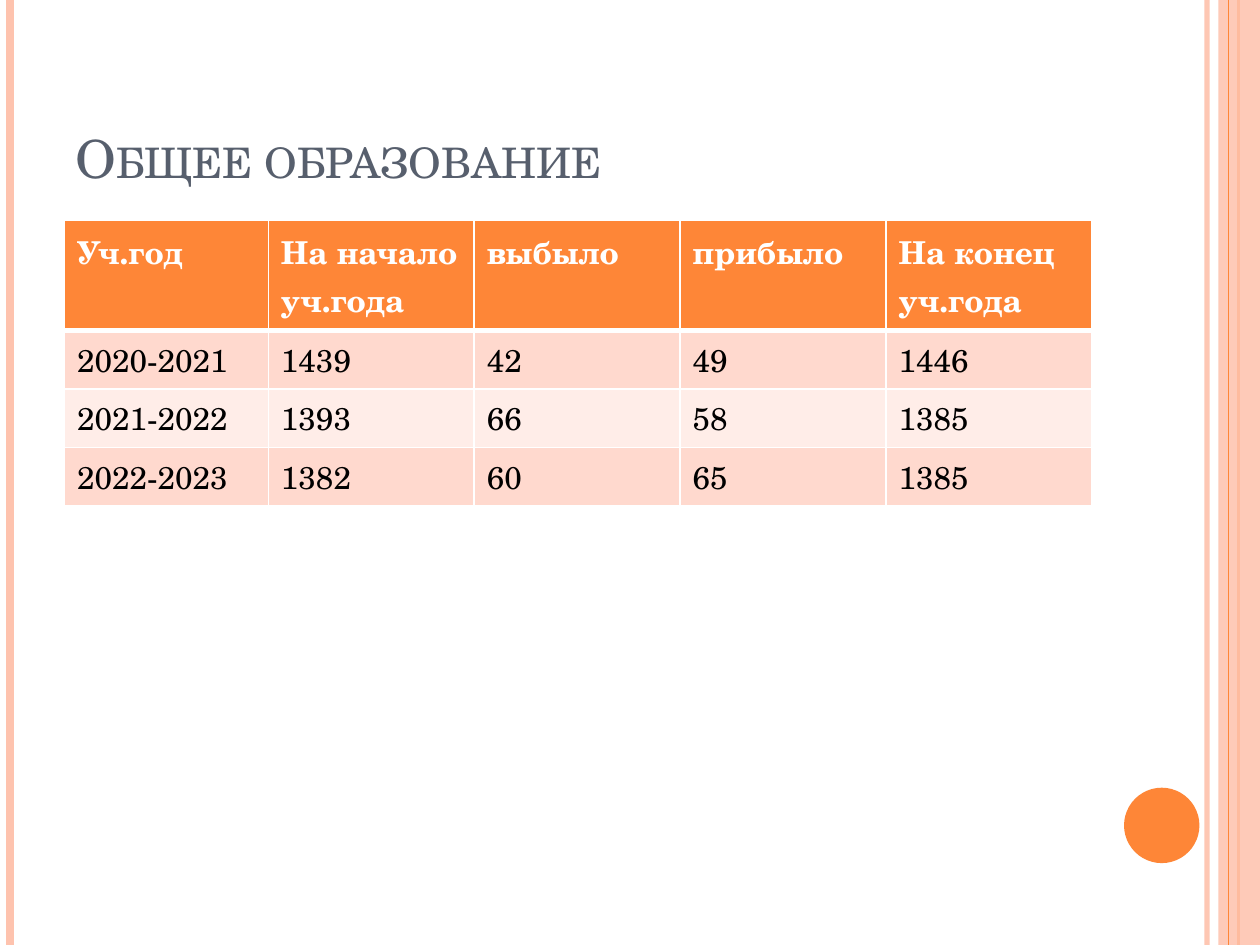
from lxml import etree
from pptx import Presentation
from pptx.dml.color import RGBColor
from pptx.enum.shapes import MSO_CONNECTOR, MSO_SHAPE
from pptx.enum.text import MSO_ANCHOR
from pptx.oxml.ns import qn
from pptx.util import Cm, Pt

STRAIGHT = MSO_CONNECTOR.STRAIGHT
RECTANGLE, OVAL = MSO_SHAPE.RECTANGLE, MSO_SHAPE.OVAL
BOTTOM = MSO_ANCHOR.BOTTOM

FONT = "TeX Gyre Schola"
COLORS = {
    "accent": "FE8637",
    "stripe": "FEC3AE",
    "title": "575F6D",
    "white": "FFFFFF",
    "black": "000000",
    "odd_row": "FFD9CE",
    "even_row": "FFEDE8",
}
SLIDE_WIDTH, SLIDE_HEIGHT = 25.4, 19.05

HEADINGS = ["Уч.год", "На начало уч.года", "выбыло", "прибыло", "На конец уч.года"]
YEARS = [
    ["2020-2021", "1439", "42", "49", "1446"],
    ["2021-2022", "1393", "66", "58", "1385"],
    ["2022-2023", "1382", "60", "65", "1385"],
]
COLUMN_WIDTHS = [4.11] + [4.15] * 4
ROW_HEIGHTS = [2.21] + [1.18] * len(YEARS)


def rgb(color):
    return RGBColor.from_string(COLORS[color])


def set_opacity(fill_parent, percent):
    color = fill_parent.find(qn("a:solidFill"))[0]
    etree.SubElement(color, qn("a:alpha"), val=str(percent * 1000))


def add_border(cell, side, width):
    """Draw one side of a cell in white; call before the cell is filled."""
    line = etree.SubElement(cell._tc.get_or_add_tcPr(), qn(f"a:ln{side}"),
                            w=str(Pt(width)))
    solid = etree.SubElement(line, qn("a:solidFill"))
    etree.SubElement(solid, qn("a:srgbClr"), val=COLORS["white"])


class SlideBuilder:
    def __init__(self, slide, font):
        self.slide = slide
        self.font = font

    def add_run(self, paragraph, text, size, color, bold=False):
        run = paragraph.add_run()
        run.text = text
        run.font.name = self.font
        run.font.size = Pt(size)
        run.font.bold = bold
        run.font.color.rgb = rgb(color)
        return run

    def vertical_line(self, x, color, width, opacity=100):
        stripe = self.slide.shapes.add_connector(
            STRAIGHT, Cm(x), Cm(0), Cm(x), Cm(SLIDE_HEIGHT))
        stripe.line.color.rgb = rgb(color)
        stripe.line.width = Pt(width)
        properties = stripe._element.spPr
        if opacity < 100:
            set_opacity(properties.find(qn("a:ln")), opacity)
        etree.SubElement(properties, qn("a:effectLst"))

    def shape(self, kind, left, top, width, height, color, opacity=100):
        figure = self.slide.shapes.add_shape(
            kind, Cm(left), Cm(top), Cm(width), Cm(height))
        figure.shadow.inherit = False
        figure.fill.solid()
        figure.fill.fore_color.rgb = rgb(color)
        figure.line.fill.background()
        if opacity < 100:
            set_opacity(figure._element.spPr, opacity)

    def title(self, text, left, top, width, height):
        box = self.slide.shapes.add_textbox(Cm(left), Cm(top), Cm(width), Cm(height))
        frame = box.text_frame
        frame.word_wrap = True
        frame.vertical_anchor = BOTTOM
        run = self.add_run(frame.paragraphs[0], text, 30, "title")
        run.font._element.set("cap", "small")

    def table(self, rows, left, top, column_widths, row_heights):
        table = self.slide.shapes.add_table(
            len(rows), len(column_widths), Cm(left), Cm(top),
            Cm(sum(column_widths)), Cm(sum(row_heights))).table
        for column, width in zip(table.columns, column_widths):
            column.width = Cm(width)
        for row, height in zip(table.rows, row_heights):
            row.height = Cm(height)
        for row_index, values in enumerate(rows):
            header = row_index == 0
            fill = "accent" if header else "odd_row" if row_index % 2 else "even_row"
            for column_index, value in enumerate(values):
                cell = table.cell(row_index, column_index)
                for side in "LRTB":
                    thick = header and side == "B" or row_index == 1 and side == "T"
                    add_border(cell, side, 3 if thick else 1)
                cell.fill.solid()
                cell.fill.fore_color.rgb = rgb(fill)
                self.add_run(cell.text_frame.paragraphs[0], value, 18,
                             "white" if header else "black", header)


def main():
    presentation = Presentation()
    presentation.slide_width = Cm(SLIDE_WIDTH)
    presentation.slide_height = Cm(SLIDE_HEIGHT)
    slide = presentation.slides.add_slide(presentation.slide_layouts[6])
    builder = SlideBuilder(slide, FONT)

    builder.vertical_line(24.33, "stripe", 3, 93)
    builder.vertical_line(0.21, "stripe", 4.5)
    builder.vertical_line(24.97, "accent", 1.5)
    builder.shape(RECTANGLE, 24.56, 0, 0.84, SLIDE_HEIGHT, "stripe", 87)
    builder.vertical_line(24.76, "accent", 0.75)
    builder.shape(OVAL, 22.66, 15.88, 1.52, 1.52, "accent")

    builder.title("Общее образование", 1.27, 0.76, 20.75, 3.18)
    builder.table([HEADINGS] + YEARS, 1.3, 4.45, COLUMN_WIDTHS, ROW_HEIGHTS)

    presentation.save("out.pptx")


if __name__ == "__main__":
    main()
